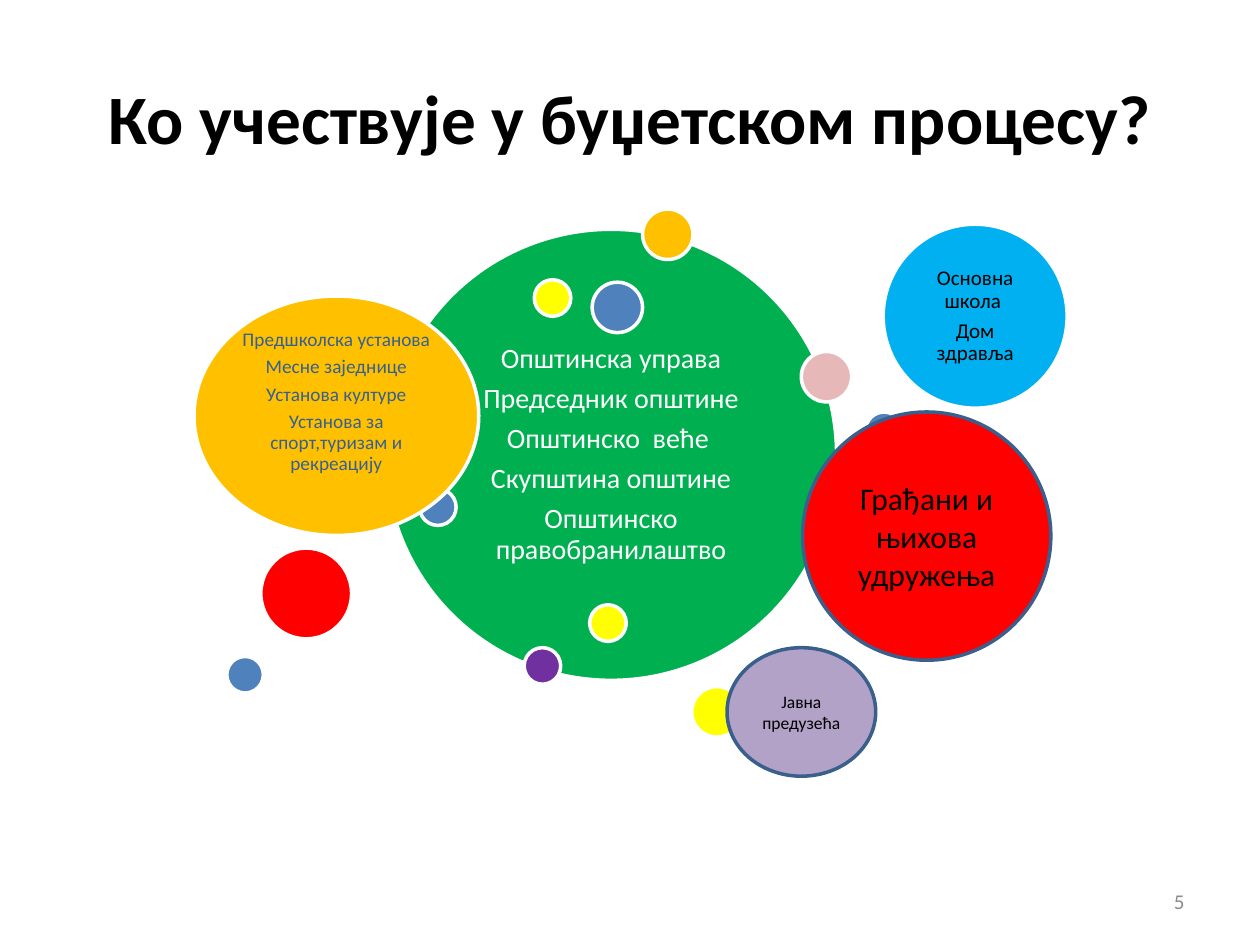
from pptx import Presentation
from pptx.dml.color import RGBColor
from pptx.enum.shapes import MSO_SHAPE
from pptx.enum.text import MSO_ANCHOR, PP_ALIGN
from pptx.util import Inches, Pt

ELLIPSE = MSO_SHAPE.OVAL
MIDDLE = MSO_ANCHOR.MIDDLE
CENTER, RIGHT = PP_ALIGN.CENTER, PP_ALIGN.RIGHT

BLACK = RGBColor(0x00, 0x00, 0x00)
WHITE = RGBColor(0xFF, 0xFF, 0xFF)
GRAY = RGBColor(0x8C, 0x8C, 0x8C)
GREEN = RGBColor(0x00, 0xB0, 0x50)
ORANGE = RGBColor(0xFF, 0xC0, 0x00)
PURPLE = RGBColor(0x70, 0x30, 0xA0)
BLUE = RGBColor(0x4F, 0x81, 0xBD)
YELLOW = RGBColor(0xFF, 0xFF, 0x00)
RED = RGBColor(0xFF, 0x00, 0x00)
SKY = RGBColor(0x00, 0xB0, 0xF0)
PINK = RGBColor(0xE6, 0xB9, 0xB8)
LILAC = RGBColor(0xB3, 0xA2, 0xC7)
NAVY = RGBColor(0x37, 0x60, 0x92)
OUTLINE = RGBColor(0x3A, 0x5F, 0x8C)

SMALL, MEDIUM, LARGE = 0.29, 0.4, 0.72  # diameters of the plain bubbles


class BubbleSlide:
    font = "Calibri"
    line_width = Pt(2)

    def __init__(self, slide):
        self.slide = slide

    def fill_text(self, frame, lines, size, color, align=CENTER, bold=False):
        frame.word_wrap = True
        frame.vertical_anchor = MIDDLE
        for i, line in enumerate(lines):
            paragraph = frame.paragraphs[0] if i == 0 else frame.add_paragraph()
            paragraph.alignment = align
            run = paragraph.add_run()
            run.text = line
            run.font.name = self.font
            run.font.size = Pt(size)
            run.font.bold = bold
            run.font.color.rgb = color

    def label(self, left, top, width, height, text, size, color, **style):
        box = self.slide.shapes.add_textbox(
            Inches(left), Inches(top), Inches(width), Inches(height))
        self.fill_text(box.text_frame, [text], size, color, **style)

    def bubble(self, left, top, width, height, fill, line=WHITE):
        oval = self.slide.shapes.add_shape(
            ELLIPSE, Inches(left), Inches(top), Inches(width), Inches(height))
        oval.shadow.inherit = False
        oval.fill.solid()
        oval.fill.fore_color.rgb = fill
        oval.line.color.rgb = line
        oval.line.width = self.line_width
        return oval

    def dots(self, places):
        for left, top, diameter, fill in places:
            self.bubble(left, top, diameter, diameter, fill)

    def group_bubble(self, place, fill, lines, size, color, inset, lift=0):
        """Bubble listing several participants; lift raises the text block."""
        frame = self.bubble(*place, fill).text_frame
        self.fill_text(frame, lines, size, color)
        frame.margin_left = frame.margin_right = frame.margin_top = Inches(inset)
        frame.margin_bottom = Inches(inset + lift)
        for paragraph in frame.paragraphs:
            paragraph.line_spacing = 0.9
            paragraph.space_after = Pt(round(size * 0.35, 1))

    def outlined_bubble(self, place, fill, text, size):
        oval = self.bubble(*place, fill, OUTLINE)
        self.fill_text(oval.text_frame, [text], size, BLACK)


def main():
    prs = Presentation()
    prs.slide_width, prs.slide_height = Inches(10), Inches(7.5)
    page = BubbleSlide(prs.slides.add_slide(prs.slide_layouts[6]))

    # Title and page number
    page.label(0.5, 0.3, 9, 1.25, "Ко учествује у буџетском процесу?",
               39.6, BLACK, bold=True)
    page.label(7.17, 6.95, 2.33, 0.4, "5", 12, GRAY, align=RIGHT)

    # Municipal bodies in the centre
    page.group_bubble(
        (3.06, 1.82, 3.58, 3.58), GREEN,
        ["Општинска управа", "Председник општине", "Општинско  веће ",
         "Скупштина општине", "Општинско правобранилаштво"],
        16, WHITE, 0.07)
    page.dots([
        (5.1, 1.66, MEDIUM, ORANGE),
        (4.16, 5.14, SMALL, PURPLE),
        (6.87, 3.27, SMALL, BLUE),
        (5.49, 5.45, MEDIUM, YELLOW),
        (4.24, 2.22, SMALL, YELLOW),
        (3.33, 3.88, SMALL, BLUE),
    ])

    # Local institutions
    page.group_bubble(
        (1.54, 2.35, 2.26, 1.9), ORANGE,
        ["Предшколска установа", "Месне заједнице", "Установа културе",
         "Установа за спорт,туризам и рекреацију"],
        11, NAVY, 0.04, lift=0.22)
    page.dots([
        (4.7, 2.24, MEDIUM, BLUE),
        (2.07, 4.35, LARGE, RED),
    ])

    # School and health centre
    page.group_bubble((7.01, 1.78, 1.46, 1.46), SKY,
                      ["Основна школа ", "Дом здравља"], 12, BLACK, 0.05)
    page.dots([
        (6.36, 2.79, MEDIUM, PINK),
        (1.8, 5.21, SMALL, BLUE),
        (4.68, 4.8, SMALL, YELLOW),
    ])

    # Citizens and public companies
    page.outlined_bubble((6.37, 3.27, 1.97, 1.97), RED,
                         "Грађани и њихова удружења", 18)
    page.outlined_bubble((5.77, 5.14, 1.18, 1.02), LILAC,
                         "Јавна предузећа", 10)

    prs.save("out.pptx")


if __name__ == "__main__":
    main()
